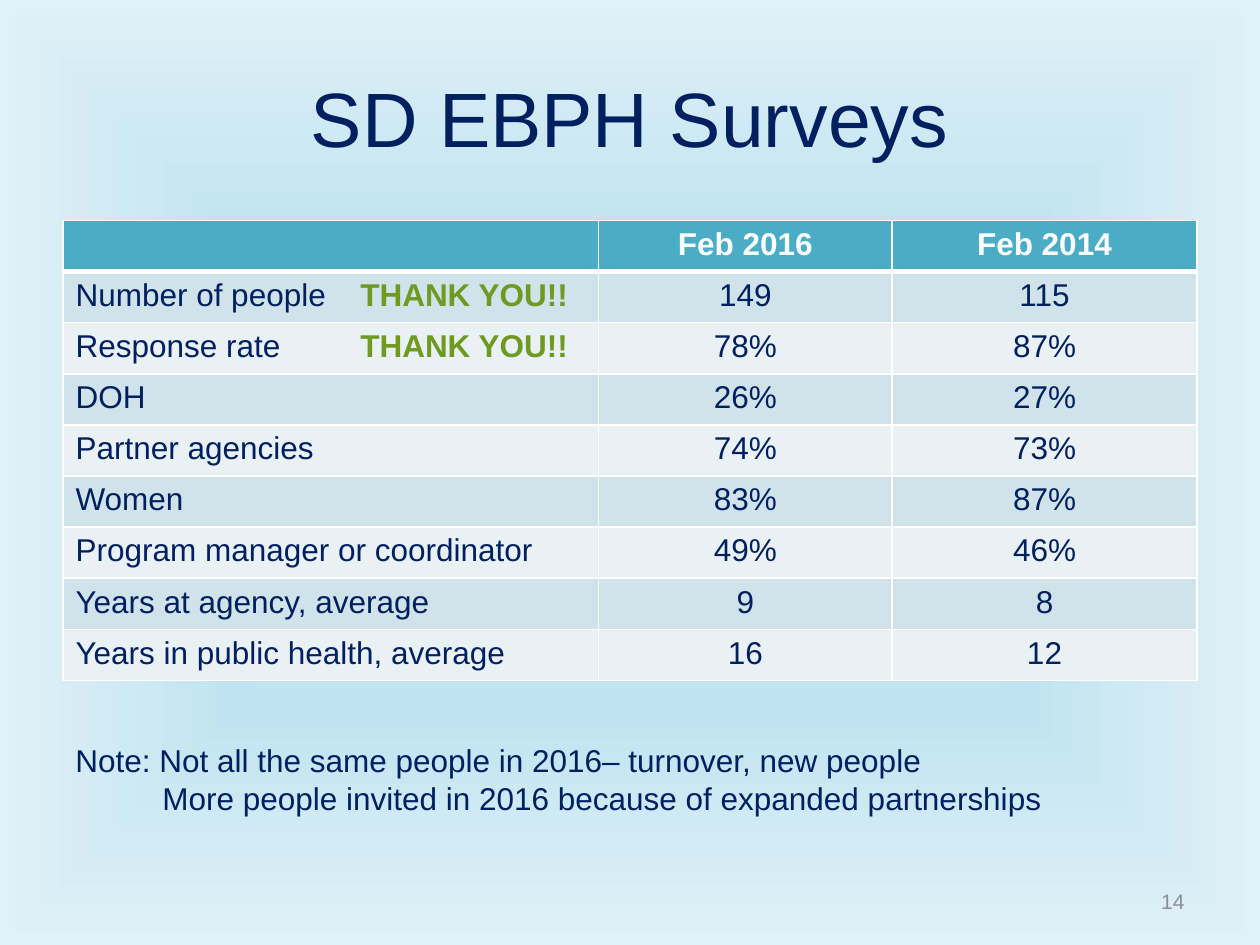
from pptx import Presentation
from pptx.dml.color import RGBColor
from pptx.enum.text import MSO_ANCHOR, PP_ALIGN
from pptx.oxml import parse_xml
from pptx.oxml.ns import nsdecls
from pptx.util import Inches, Pt

NAVY, GREEN, GREY, WHITE = "002060", "6F9A22", "8C8D9D", "FFFFFF"
HEADER_FILL, BAND_FILLS = "4BACC6", ("D0E3EA", "E9F1F5")


def add_text(paragraph, text, size=18, color=NAVY, bold=False, align=PP_ALIGN.LEFT):
    paragraph.alignment = align
    run = paragraph.add_run()
    run.text = text
    run.font.name = "Arial"
    run.font.size = Pt(size)
    run.font.bold = bold
    run.font.color.rgb = RGBColor.from_string(color)


def style_cell(cell, fill, top=1, bottom=1):
    """Fill a cell and give it white borders, widths in points."""
    cell.fill.solid()
    cell.fill.fore_color.rgb = RGBColor.from_string(fill)
    properties = cell._tc.get_or_add_tcPr()
    for position, (side, width) in enumerate(
            (("L", 1), ("R", 1), ("T", top), ("B", bottom))):
        properties.insert(position, parse_xml(
            f'<a:ln{side} {nsdecls("a")} w="{Pt(width)}"><a:solidFill>'
            f'<a:srgbClr val="{WHITE}"/></a:solidFill></a:ln{side}>'))


prs = Presentation()
prs.slide_width, prs.slide_height = Inches(10), Inches(7.5)
slide = prs.slides.add_slide(prs.slide_layouts[5])

# Background glowing from the centre
slide.background.fill.solid()
solid = slide.element.xpath("./p:cSld/p:bg/p:bgPr/a:solidFill")[0]
stops = "".join(
    f'<a:gs pos="{percent * 1000}"><a:srgbClr val="{color}"/></a:gs>'
    for percent, color in ((0, "DBEEF4"), (50, "C0E3F1"), (100, "E0F1F7")))
solid.getparent().replace(solid, parse_xml(
    f'<a:gradFill {nsdecls("a")} rotWithShape="1"><a:gsLst>{stops}</a:gsLst>'
    '<a:path path="shape"><a:fillToRect l="50000" t="50000" r="50000" b="50000"/>'
    '</a:path></a:gradFill>'))

title = slide.shapes.title
title.left, title.top = Inches(0.5), Inches(0.3)
title.width, title.height = Inches(9), Inches(1.25)
title.text_frame.vertical_anchor = MSO_ANCHOR.MIDDLE
add_text(title.text_frame.paragraphs[0], "SD EBPH Surveys", size=44,
         align=PP_ALIGN.CENTER)

# Survey results
results = [
    ("", "Feb 2016", "Feb 2014"),
    ("Number of people", "149", "115"),
    ("Response rate", "78%", "87%"),
    ("DOH", "26%", "27%"),
    ("Partner agencies", "74%", "73%"),
    ("Women", "83%", "87%"),
    ("Program manager or coordinator", "49%", "46%"),
    ("Years at agency, average", "9", "8"),
    ("Years in public health, average", "16", "12"),
]
thanked = ("Number of people", "Response rate")
survey = slide.shapes.add_table(len(results), 3, Inches(0.5), Inches(1.75),
                                Inches(9), Inches(3.65)).table
for column, width in zip(survey.columns, (4.25, 2.33, 2.42)):
    column.width = Inches(width)

for row, values in enumerate(results):
    header = row == 0
    fill = HEADER_FILL if header else BAND_FILLS[(row - 1) % 2]
    for col, value in enumerate(values):
        cell = survey.cell(row, col)
        style_cell(cell, fill, top=3 if row == 1 else 1, bottom=3 if header else 1)
        paragraph = cell.text_frame.paragraphs[0]
        if value:
            add_text(paragraph, value, color=WHITE if header else NAVY, bold=header,
                     align=PP_ALIGN.CENTER if col else PP_ALIGN.LEFT)
        if value in thanked:
            add_text(paragraph, "\tTHANK YOU!!", color=GREEN, bold=True)
            paragraph._p.get_or_add_pPr().append(parse_xml(
                f'<a:tabLst {nsdecls("a")}><a:tab pos="{Inches(2.26)}" algn="l"/>'
                '</a:tabLst>'))

# Page number
page_number = slide.shapes.add_textbox(
    Inches(7.17), Inches(6.95), Inches(2.33), Inches(0.4)).text_frame
page_number.word_wrap = True
page_number.vertical_anchor = MSO_ANCHOR.MIDDLE
add_text(page_number.paragraphs[0], "14", size=12, color=GREY, align=PP_ALIGN.RIGHT)

# Note, with its second line set in under the first
note = slide.shapes.add_textbox(
    Inches(0.5), Inches(5.83), Inches(8.92), Inches(0.71)).text_frame
note.word_wrap = True
add_text(note.paragraphs[0],
         "Note: Not all the same people in 2016– turnover, new people")
second_line = note.add_paragraph()
add_text(second_line, "More people invited in 2016 because of expanded partnerships")
second_line._p.get_or_add_pPr().set("marL", str(Inches(0.69)))

prs.save("out.pptx")
